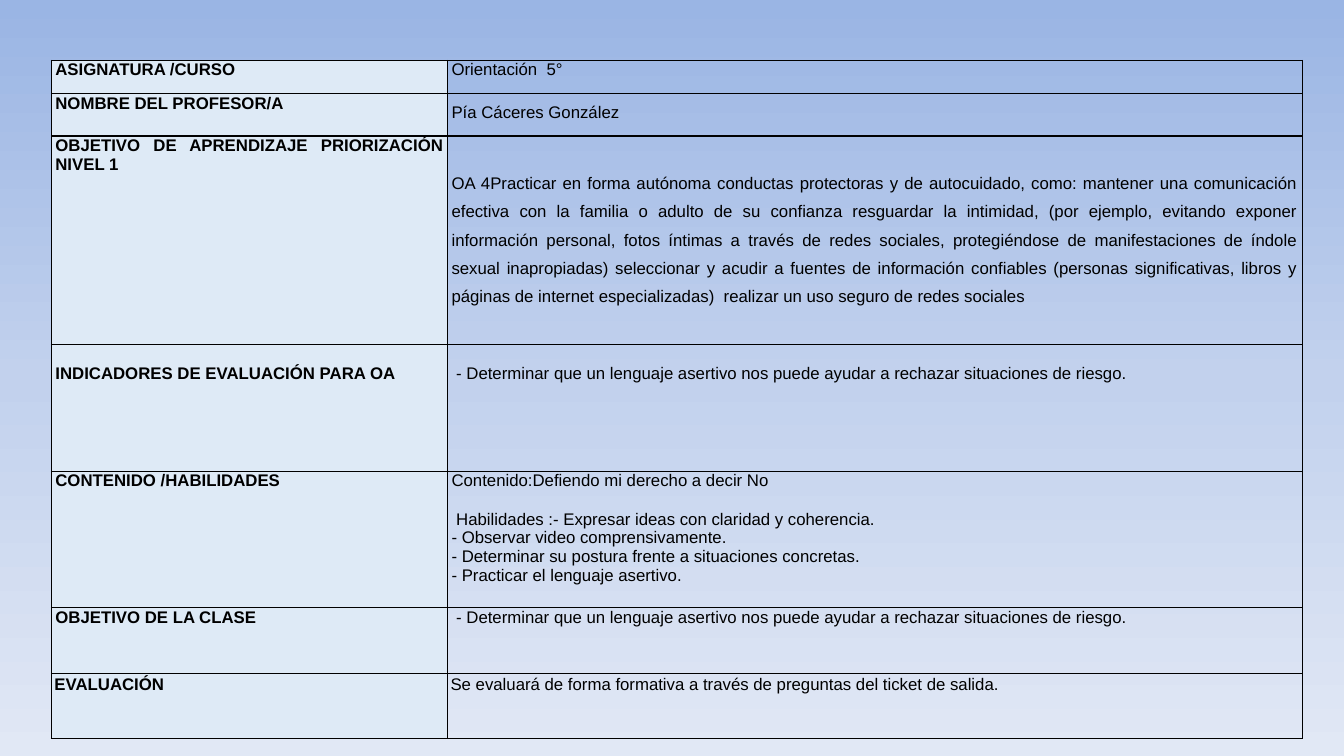
"""Build the lesson plan slide with its two-column table."""
from copy import deepcopy
from dataclasses import dataclass

from pptx import Presentation
from pptx.dml.color import RGBColor
from pptx.enum.text import MSO_ANCHOR, PP_ALIGN as Align
from pptx.oxml import parse_xml
from pptx.oxml.ns import nsdecls
from pptx.util import Pt

BLACK = "000000"
LABEL_FILL = "DEEAF6"
GRADIENT = ((0, "9AB5E4"), (0.5, "C2D1ED"), (1, "E1E8F5"))
COLUMN_WIDTHS = (282.96, 610.56)
LINE = 13.8
GOAL = " - Determinar que un lenguaje asertivo nos puede ayudar a rechazar situaciones de riesgo."


@dataclass
class PlanRow:
    height: float
    label: str
    content: tuple[str, ...]
    label_top: float = 0
    content_top: float = 0
    spacing: float = 1
    side: float = 2.88
    paragraph_gap: float = 0


ROWS = (
    PlanRow(23.76, "ASIGNATURA /CURSO", ("Orientación  5°",)),
    PlanRow(30.24, "NOMBRE DEL PROFESOR/A", ("Pía Cáceres González",), spacing=1.5),
    PlanRow(
        149.04,
        "OBJETIVO DE APRENDIZAJE PRIORIZACIÓN NIVEL 1",
        (
            "OA 4Practicar en forma autónoma conductas protectoras y de autocuidado, como: "
            "mantener una comunicación efectiva con la familia o adulto de su confianza "
            "resguardar la intimidad, (por ejemplo, evitando exponer información personal, "
            "fotos íntimas a través de redes sociales, protegiéndose de manifestaciones de "
            "índole sexual inapropiadas) seleccionar y acudir a fuentes de información "
            "confiables (personas significativas, libros y páginas de internet "
            "especializadas)  realizar un uso seguro de redes sociales",
        ),
        content_top=1.5 * LINE,
        spacing=1.5,
    ),
    PlanRow(90.72, "INDICADORES DE EVALUACIÓN PARA OA", (GOAL,), label_top=LINE, content_top=LINE),
    PlanRow(
        97.2,
        "CONTENIDO /HABILIDADES",
        (
            "Contenido:Defiendo mi derecho a decir No",
            " Habilidades :- Expresar ideas con claridad y coherencia.",
            "- Observar video comprensivamente.",
            "- Determinar su postura frente a situaciones concretas.",
            "- Practicar el lenguaje asertivo.",
        ),
        paragraph_gap=LINE,
    ),
    PlanRow(46.8, "OBJETIVO DE LA CLASE", (GOAL,)),
    PlanRow(
        46.8,
        "EVALUACIÓN",
        ("Se evaluará de forma formativa a través de preguntas del ticket de salida.",),
        label_top=1.44,
        content_top=1.44,
        side=2.16,
    ),
)


def color(value: str) -> RGBColor:
    return RGBColor.from_string(value)


def paint_background(page) -> None:
    fill = page.background.fill
    fill.gradient()
    fill.gradient_angle = 270
    stop_list = page.element.xpath(".//a:gsLst")[0]
    stop_list.insert(1, deepcopy(stop_list[0]))
    for stop, (position, shade) in zip(page.background.fill.gradient_stops, GRADIENT):
        stop.position = position
        stop.color.rgb = color(shade)


def add_borders(cell) -> None:
    properties = cell._tc.get_or_add_tcPr()
    for index, side in enumerate(("lnL", "lnR", "lnT", "lnB")):
        border = parse_xml(
            f'<a:{side} {nsdecls("a")} w="{Pt(1)}"><a:solidFill>'
            f'<a:srgbClr val="{BLACK}"/></a:solidFill></a:{side}>'
        )
        properties.insert(index, border)


def fill_cell(cell, lines: tuple[str, ...], row: PlanRow, top: float, is_label: bool) -> None:
    cell.margin_left = cell.margin_right = Pt(row.side)
    cell.margin_top, cell.margin_bottom = Pt(top), Pt(0)
    cell.vertical_anchor = MSO_ANCHOR.TOP
    if is_label:
        cell.fill.solid()
        cell.fill.fore_color.rgb = color(LABEL_FILL)
    else:
        cell.fill.background()
    add_borders(cell)
    cell.text_frame.text = "\n".join(lines)
    for index, para in enumerate(cell.text_frame.paragraphs):
        para.alignment = Align.JUSTIFY
        para.line_spacing = 1.0 if is_label else float(row.spacing)
        para.space_before = Pt(row.paragraph_gap if index == 1 else 0)
        for span in para.runs:
            span.font.name = "Arial"
            span.font.size = Pt(12)
            span.font.bold = is_label
            span.font.color.rgb = color(BLACK)


def add_plan_table(page) -> None:
    height = sum(row.height for row in ROWS)
    frame = page.shapes.add_table(
        len(ROWS), 2, Pt(36.72), Pt(43.2), Pt(sum(COLUMN_WIDTHS)), Pt(height)
    )
    table = frame.table
    table.first_row = table.horz_banding = False
    for column, width in zip(table.columns, COLUMN_WIDTHS):
        column.width = Pt(width)
    for line, row in zip(table.rows, ROWS):
        line.height = Pt(row.height)
        label, content = line.cells
        fill_cell(label, (row.label,), row, row.label_top, True)
        fill_cell(content, row.content, row, row.content_top, False)


def main() -> None:
    deck = Presentation()
    deck.slide_width, deck.slide_height = Pt(960), Pt(540)
    page = deck.slides.add_slide(deck.slide_layouts[6])
    paint_background(page)
    add_plan_table(page)
    deck.save("out.pptx")


if __name__ == "__main__":
    main()
